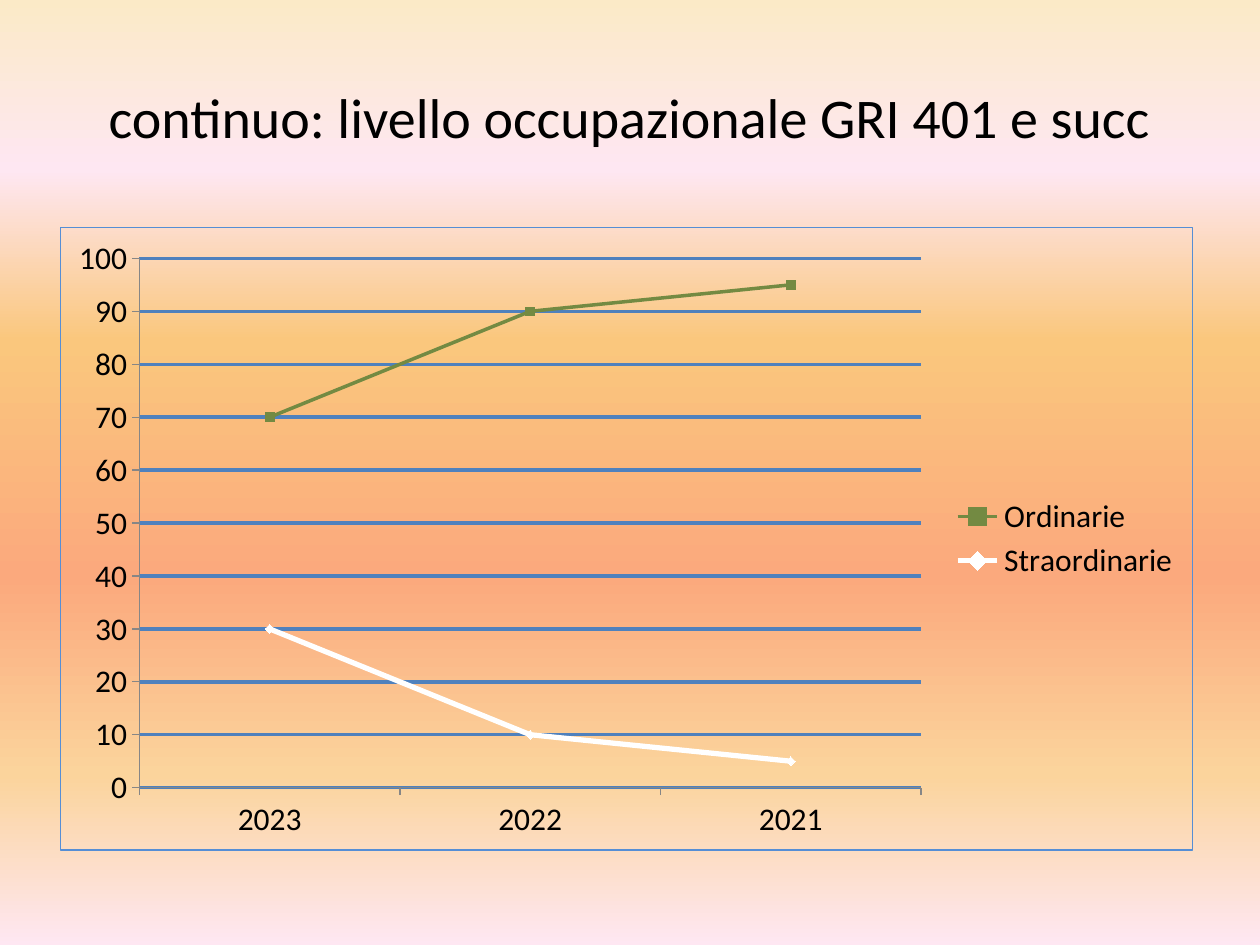
from lxml import etree
from pptx import Presentation
from pptx.chart.data import CategoryChartData
from pptx.dml.color import RGBColor
from pptx.enum.chart import XL_CHART_TYPE, XL_LEGEND_POSITION, XL_MARKER_STYLE, XL_TICK_MARK
from pptx.enum.text import MSO_ANCHOR, PP_ALIGN
from pptx.oxml import parse_xml
from pptx.oxml.ns import nsdecls, qn
from pptx.util import Cm, Pt

LINE = XL_CHART_TYPE.LINE_MARKERS
RIGHT = XL_LEGEND_POSITION.RIGHT
SQUARE, DIAMOND = XL_MARKER_STYLE.SQUARE, XL_MARKER_STYLE.DIAMOND
OUT, NONE = XL_TICK_MARK.OUTSIDE, XL_TICK_MARK.NONE
MIDDLE, CENTER = MSO_ANCHOR.MIDDLE, PP_ALIGN.CENTER

FONT = "Calibri"
COLORS = {
    "text": "000000", "grid": "4F81BD", "border": "558ED5", "axis": "868686",
    "green": "738A42", "white": "FFFFFF",
    "cream": "FBEAC7", "pink": "FEE7F2", "gold": "FAC77D",
    "coral": "FBA97D", "sand": "FBD49C",
}
STOPS = [(0, "cream"), (18, "pink"), (36, "gold"),
         (61, "coral"), (82, "sand"), (100, "pink")]
YEARS = ["2023", "2022", "2021"]
SERIES = [
    ("Ordinarie", (70, 90, 95), "green", 2, SQUARE),
    ("Straordinarie", (30, 10, 5), "white", 3, DIAMOND),
]
PLOT = {"x": 0.07, "y": 0.05, "w": 0.69, "h": 0.85}


def assign(item, **values):
    for key, value in values.items():
        setattr(item, key, value)


def color(name):
    return RGBColor.from_string(COLORS[name])


def style_font(font, size):
    assign(font, name=FONT, size=Pt(size), bold=False)
    font.color.rgb = color("text")


def style_line(line, name, width):
    line.color.rgb = color(name)
    line.width = Pt(width)


def paint_back(slide):
    slide.background.fill.gradient()
    grad = slide._element.find(".//" + qn("a:gradFill"))
    stops = grad.find(qn("a:gsLst"))
    for stop in list(stops):
        stops.remove(stop)
    for place, name in STOPS:
        stop = etree.SubElement(stops, qn("a:gs"), pos=str(place * 1000))
        etree.SubElement(stop, qn("a:srgbClr"), val=COLORS[name])
    grad.find(qn("a:lin")).set("ang", str(90 * 60000))


def add_title(slide, box, text):
    title = slide.shapes.title
    assign(title, **box)
    frame = title.text_frame
    frame.text = text
    assign(frame, vertical_anchor=MIDDLE, word_wrap=True)
    par = frame.paragraphs[0]
    par.alignment = CENTER
    style_font(par.runs[0].font, 32)


def set_border(chart, name, width):
    border = parse_xml(
        f'<c:spPr {nsdecls("c", "a")}><a:noFill/><a:ln w="{Pt(width)}">'
        f'<a:solidFill><a:srgbClr val="{COLORS[name]}"/></a:solidFill>'
        '</a:ln></c:spPr>')
    chart._chartSpace.find(qn("c:txPr")).addprevious(border)


def set_layout(chart):
    area = chart._chartSpace.chart.plotArea
    for old in area.findall(qn("c:layout")):
        area.remove(old)
    layout = etree.Element(qn("c:layout"))
    manual = etree.SubElement(layout, qn("c:manualLayout"))
    modes = {"layoutTarget": "inner", "xMode": "edge", "yMode": "edge"}
    for key, value in {**modes, **PLOT}.items():
        etree.SubElement(manual, qn("c:" + key), val=str(value))
    area.insert(0, layout)


def style_axes(chart):
    for axis in (chart.category_axis, chart.value_axis):
        assign(axis, major_tick_mark=OUT, minor_tick_mark=NONE)
        style_line(axis.format.line, "axis", 0.75)
    axis = chart.value_axis
    assign(axis, minimum_scale=0, maximum_scale=100, major_unit=10,
           has_major_gridlines=True)
    style_line(axis.major_gridlines.format.line, "grid", 2)


def add_lines(slide, box):
    data = CategoryChartData()
    data.categories = YEARS
    for name, values, *_ in SERIES:
        data.add_series(name, values)
    frame = slide.shapes.add_chart(LINE, *box.values(), data)
    chart = frame.chart
    assign(chart, has_title=False, has_legend=True)
    assign(chart.legend, position=RIGHT, include_in_layout=False)
    style_font(chart.font, 18)
    set_border(chart, "border", 0.75)
    set_layout(chart)
    style_axes(chart)
    plot = chart.plots[0]
    plot.vary_by_categories = False
    for series, (_, _, name, width, mark) in zip(plot.series, SERIES):
        series.smooth = False
        style_line(series.format.line, name, width)
        assign(series.marker, style=mark, size=5)
        series.marker.format.fill.solid()
        series.marker.format.fill.fore_color.rgb = color(name)
        style_line(series.marker.format.line, name, 0.75)


def main():
    deck = Presentation()
    assign(deck, slide_width=Cm(25.4), slide_height=Cm(19.05))
    slide = deck.slides.add_slide(deck.slide_layouts[5])
    paint_back(slide)
    add_title(slide, {"left": Cm(1.27), "top": Cm(0.76),
                      "width": Cm(22.86), "height": Cm(3.18)},
              "continuo: livello occupazionale GRI 401 e succ")
    add_lines(slide, {"left": Cm(1.2), "top": Cm(4.57),
                      "width": Cm(22.86), "height": Cm(12.58)})
    deck.save("out.pptx")


if __name__ == "__main__":
    main()
